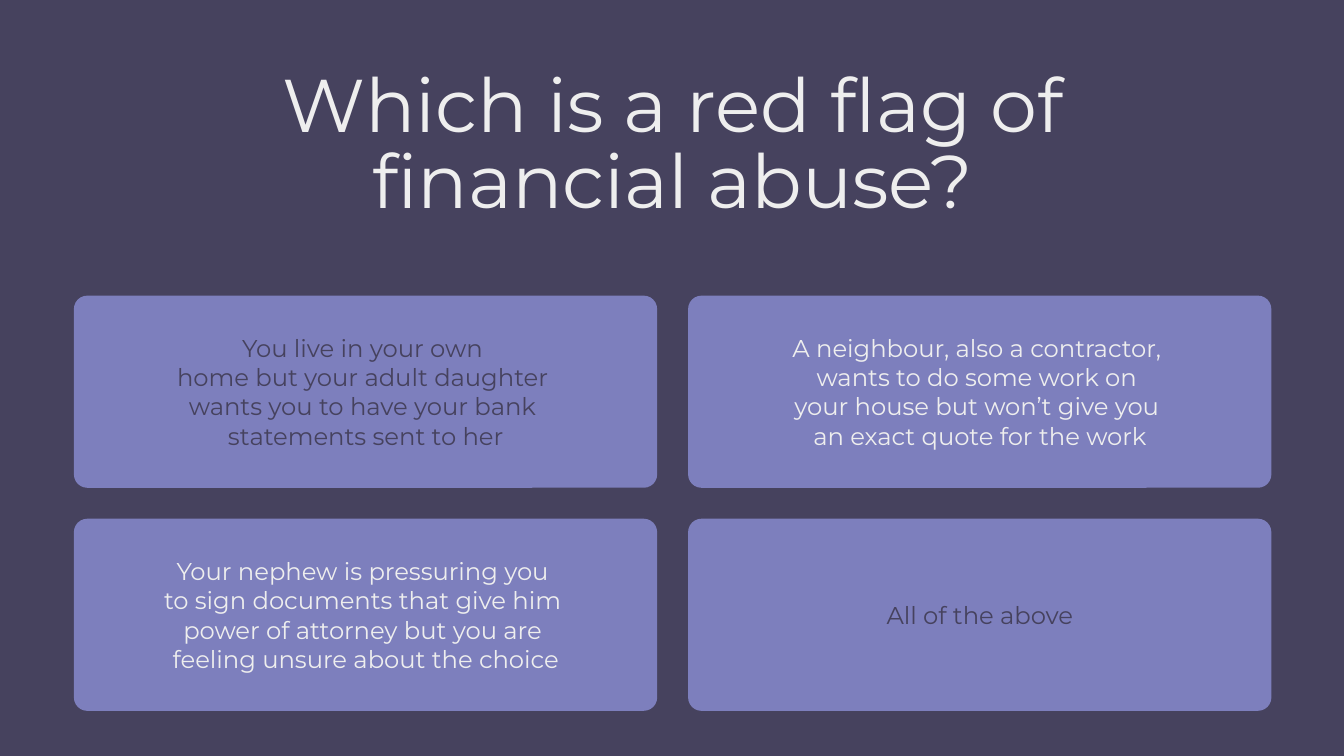
from copy import deepcopy

from pptx import Presentation
from pptx import util as u
from pptx.dml.color import RGBColor
from pptx.enum import shapes, text
from pptx.oxml.ns import qn

DARK, LIGHT, CARD = "46425E", "EEEEEE", "7D7FBD"
QUESTION = "Which is a red flag of financial abuse?"
ANSWERS = [
    [("You live in your own \nhome but your adult daughter \n"
      "wants you to have your bank \nstatements sent to her", DARK),
     ("A neighbour, also a contractor, \nwants to do some work on \n"
      "your house but won’t give you \nan exact quote for the work", LIGHT)],
    [("Your nephew is pressuring you \nto sign documents that give him \n"
      "power of attorney but you are \nfeeling unsure about the choice", LIGHT),
     ("All of the above", DARK)],
]
SLIDE_WIDTH = 10
SLIDE_HEIGHT = SLIDE_WIDTH * 9 / 16
LEFT, TOP, WIDTH, HEIGHT = 0.55, 2.2, 4.34, 1.43
COLUMN_STEP, ROW_STEP = 4.57, 1.66
FRAME = {"word_wrap": True, "auto_size": text.MSO_AUTO_SIZE.NONE,
         **{f"margin_{side}": u.Inches(0.1) for side in ("left", "top", "right", "bottom")}}
TITLE_SPACING = {"line_spacing": 0.85, "space_after": u.Pt(5)}


def apply(target, formats):
    for name, value in formats.items():
        setattr(target, name, value)


def paint(fill, colour):
    fill.solid()
    fill.fore_color.rgb = RGBColor.from_string(colour)


def write(shape, wording, size, colour, anchor, spacing):
    frame = shape.text_frame
    apply(frame, {**FRAME, "vertical_anchor": anchor})
    paragraph = frame.paragraphs[0]
    paragraph.text = wording.replace("\n", "\v")
    apply(paragraph, {"alignment": text.PP_ALIGN.CENTER, **spacing})
    for run in paragraph.runs:
        apply(run.font, {"name": "Montserrat", "size": u.Pt(size)})
        paint(run.font.fill, colour)
    for line_break in paragraph._p.findall(qn("a:br")):
        line_break.append(deepcopy(paragraph.runs[0]._r.get_or_add_rPr()))


def main():
    """Build a quiz slide with a question above a grid of four answers."""
    deck = Presentation()
    apply(deck, {"slide_width": u.Inches(SLIDE_WIDTH), "slide_height": u.Inches(SLIDE_HEIGHT)})
    slide = deck.slides.add_slide(deck.slide_layouts[5])
    paint(slide.background.fill, DARK)

    question = slide.shapes.title
    apply(question, {"left": u.Inches(1.86), "top": u.Inches(0.43),
                     "width": u.Inches(6.29), "height": u.Inches(1.36)})
    write(question, QUESTION, 40, LIGHT, text.MSO_ANCHOR.TOP, TITLE_SPACING)

    for row, answers in enumerate(ANSWERS):
        for column, (wording, colour) in enumerate(answers):
            card = slide.shapes.add_shape(
                shapes.MSO_SHAPE.ROUNDED_RECTANGLE,
                u.Inches(LEFT + column * COLUMN_STEP), u.Inches(TOP + row * ROW_STEP),
                u.Inches(WIDTH), u.Inches(HEIGHT))
            card.adjustments[0] = 0.07
            card.shadow.inherit = False
            card.line.fill.background()
            paint(card.fill, CARD)
            write(card, wording, 13, colour, text.MSO_ANCHOR.MIDDLE, {})

    deck.save("out.pptx")


if __name__ == "__main__":
    main()
